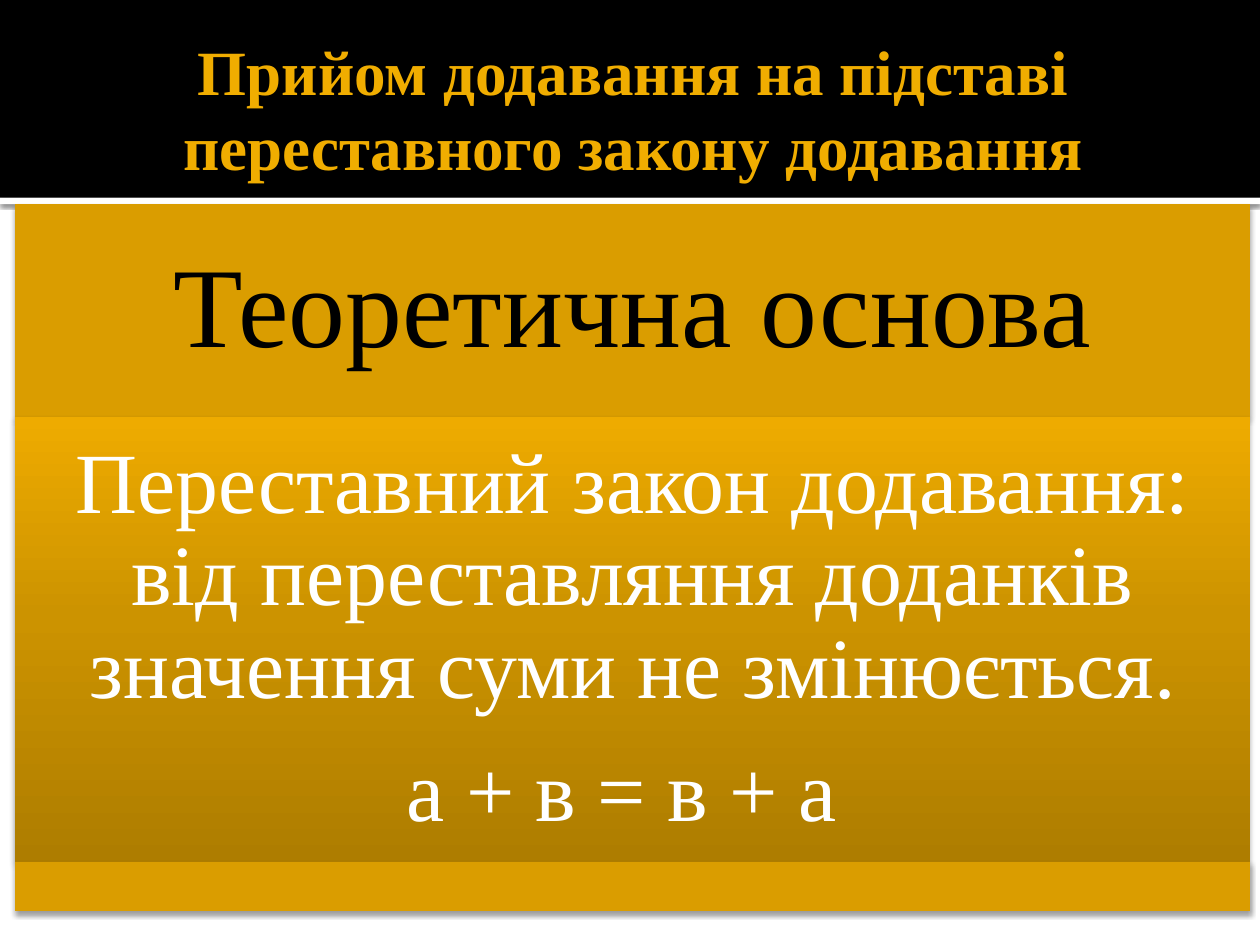
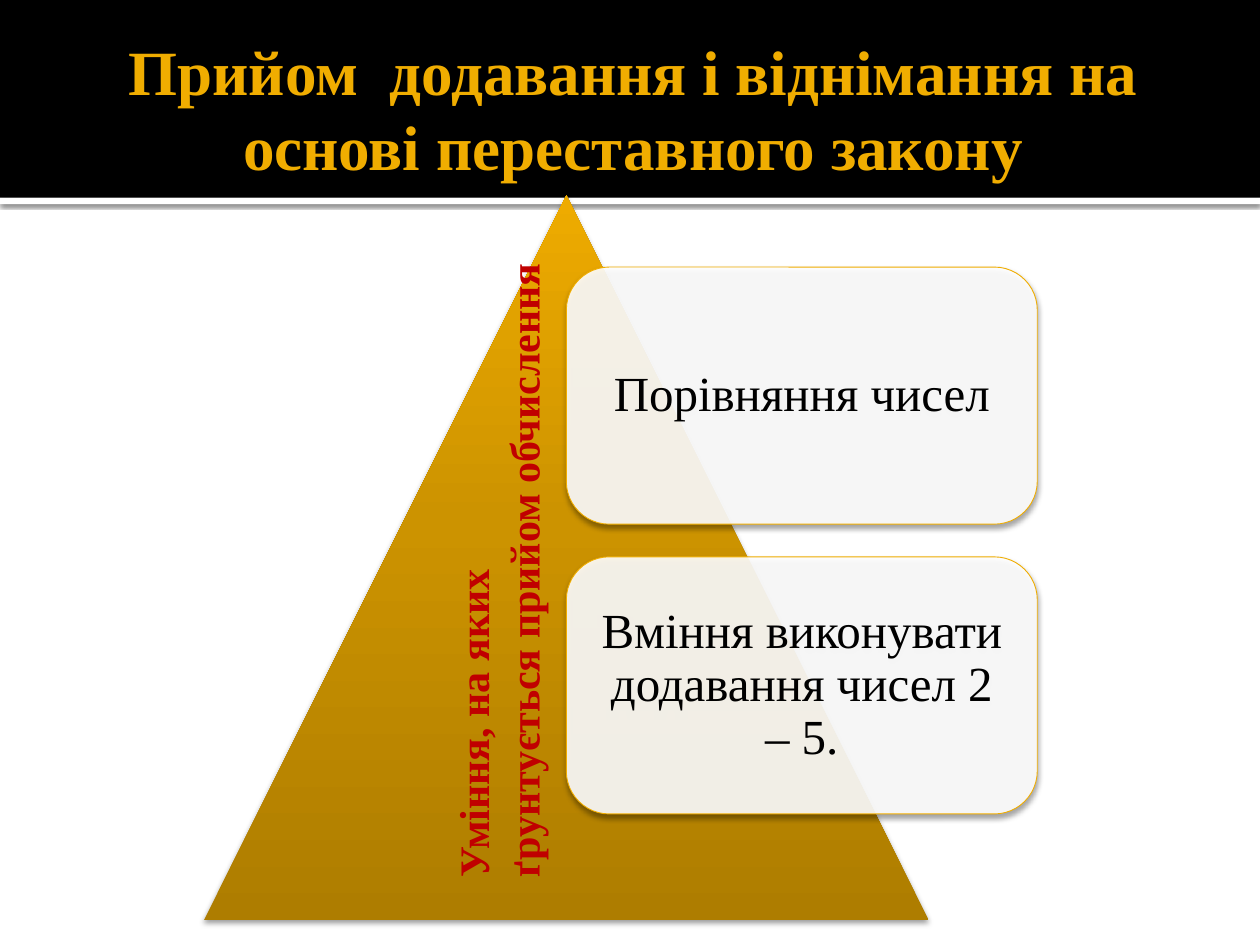
from lxml import etree
from pptx import Presentation
from pptx.dml.color import RGBColor
from pptx.enum import shapes, text
from pptx.oxml import ns
from pptx.util import Inches, Pt

WIDTH, HEIGHT = 10, 7.5
FONT = "Times New Roman"
COLORS = {
    "paper": "FFFFFF", "band": "000000", "ink": "000000", "amber": "F0AD00",
    "panel": "DA9D00", "crimson": "C00000",
}
GOLD_STOPS = [(0, "AE7D00"), (55, "CC9300"), (100, "EEAB00")]
SOFT_SHADOW = dict(alpha=38, blur=3.1, dist=2)
BAND_SHADOW = dict(alpha=60, blur=2.5, dist=0.8)
BAND_HEIGHT, STRIPE_HEIGHT = 1.57, 0.05

LAW = {
    "title": "Прийом додавання на підставі переставного закону додавання",
    "heading": ["Теоретична основа"],
    "body": ["Переставний закон додавання: від переставляння доданків "
             "значення суми не змінюється.", "а + в = в + а "],
}
SKILLS = {
    "title": "Прийом  додавання і віднімання на основі переставного закону",
    "basis": ["Уміння, на яких", "ґрунтується прийом обчислення"],
    "cards": ["Порівняння чисел", "Вміння виконувати додавання чисел 2 – 5."],
}


def rgb(name):
    return RGBColor.from_string(COLORS[name])


def add_xml(parent, tag, **attributes):
    return etree.SubElement(parent, ns.qn(tag),
                            {key: str(value) for key, value in attributes.items()})


def write(frame, lines, size, color="ink", bold=False, inset=(0.1, 0.05, 0.1, 0.05),
          align=text.PP_ALIGN.CENTER, anchor=text.MSO_ANCHOR.MIDDLE,
          spacing=None, after=None):
    """Fill a text frame; after is the paragraph gap as a share of the text size."""
    frame.word_wrap = True
    frame.auto_size = text.MSO_AUTO_SIZE.NONE
    frame.vertical_anchor = anchor
    (frame.margin_left, frame.margin_top,
     frame.margin_right, frame.margin_bottom) = map(Inches, inset)
    for number, line in enumerate(lines):
        paragraph = frame.add_paragraph() if number else frame.paragraphs[0]
        paragraph.alignment = align
        if spacing:
            paragraph.line_spacing = spacing
        if after:
            paragraph.space_after = Pt(after * size)
        run = paragraph.add_run()
        run.text = line
        run.font.name, run.font.size, run.font.bold = FONT, Pt(size), bold
        run.font.color.rgb = rgb(color)


def write_block(shape, lines, size, color, inset):
    write(shape.text_frame, lines, size, color, inset=(inset,) * 4,
          spacing=0.9, after=0.35)


def set_shadow(shape, alpha, blur, dist):
    shape.shadow.inherit = False
    effects = shape._element.spPr.find(ns.qn("a:effectLst"))
    outer = add_xml(effects, "a:outerShdw", blurRad=Pt(blur), dist=Pt(dist),
                    dir=5400000, algn="ctr", rotWithShape=0)
    add_xml(add_xml(outer, "a:srgbClr", val="000000"), "a:alpha", val=alpha * 1000)


def fill_gold(shape):
    """Fill with the three-stop gradient, light at the top."""
    shape.fill.gradient()
    gradient = shape._element.spPr.find(ns.qn("a:gradFill"))
    for child in list(gradient):
        gradient.remove(child)
    stops = add_xml(gradient, "a:gsLst")
    for position, color in GOLD_STOPS:
        add_xml(add_xml(stops, "a:gs", pos=position * 1000), "a:srgbClr", val=color)
    add_xml(gradient, "a:lin", ang=270 * 60000, scaled=0)


def add_block(slide, kind, box, color=None, shadow=SOFT_SHADOW):
    """Add a borderless shape; without a colour it gets the gold gradient."""
    block = slide.shapes.add_shape(kind, *map(Inches, box))
    block.line.fill.background()
    if color:
        block.fill.solid()
        block.fill.fore_color.rgb = rgb(color)
    else:
        fill_gold(block)
    block.shadow.inherit = False
    if shadow:
        set_shadow(block, **shadow)
    return block


def add_titled_slide(deck, title_text):
    slide = deck.slides.add_slide(deck.slide_layouts[5])
    rectangle = shapes.MSO_SHAPE.RECTANGLE
    add_block(slide, rectangle, (0, BAND_HEIGHT, WIDTH, STRIPE_HEIGHT), "paper", BAND_SHADOW)
    add_block(slide, rectangle, (0, 0, WIDTH, BAND_HEIGHT), "band", None)
    title = slide.shapes.title
    title.left, title.top, title.width, title.height = map(Inches, (0.5, 0.17, 9, 1.37))
    write(title.text_frame, [title_text], 36, "amber", bold=True,
          inset=(0.1, 0.05, 0.05, 0.05))
    slide.shapes._spTree.append(title._element)  # in front of the bands
    return slide


def build_law(deck):
    slide = add_titled_slide(deck, LAW["title"])
    left, width = 0.12, 9.8
    top = BAND_HEIGHT + STRIPE_HEIGHT
    panels = []
    for height, color in [(1.69, "panel"), (3.53, None), (0.39, "panel")]:
        panels.append(add_block(slide, shapes.MSO_SHAPE.RECTANGLE,
                                (left, top, width, height), color))
        top += height
    heading, body, _ = panels
    write_block(heading, LAW["heading"], 65, "ink", 0.27)
    write_block(body, LAW["body"], 49, "paper", 0.2)


def build_skills(deck):
    slide = add_titled_slide(deck, SKILLS["title"])
    left, top, side = 1.62, 1.55, 5.75
    add_block(slide, shapes.MSO_SHAPE.ISOSCELES_TRIANGLE, (left, top, side, side))

    card_width, card_height, gap = 0.65 * side, 2.04, 0.26
    for row, line in enumerate(SKILLS["cards"]):
        card = add_block(slide, shapes.MSO_SHAPE.ROUNDED_RECTANGLE,
                         (left + side / 2, 2.12 + row * (card_height + gap),
                          card_width, card_height), "paper")
        paper = card._element.spPr.find(ns.qn("a:solidFill"))
        add_xml(paper[0], "a:alpha", val=90000)
        card.line.color.rgb, card.line.width = rgb("amber"), Pt(0.5)
        write_block(card, [line], 28, "ink", 0.12)

    basis = slide.shapes.add_textbox(*map(Inches, (3.5, 1.8, 1.01, 5.26)))
    write(basis.text_frame, SKILLS["basis"], 24, "crimson", bold=True,
          align=text.PP_ALIGN.LEFT, anchor=text.MSO_ANCHOR.TOP)
    basis.text_frame._txBody.bodyPr.set("vert", "vert270")


def main():
    deck = Presentation()
    deck.slide_width, deck.slide_height = Inches(WIDTH), Inches(HEIGHT)
    build_law(deck)
    build_skills(deck)
    deck.save("out.pptx")


if __name__ == "__main__":
    main()
